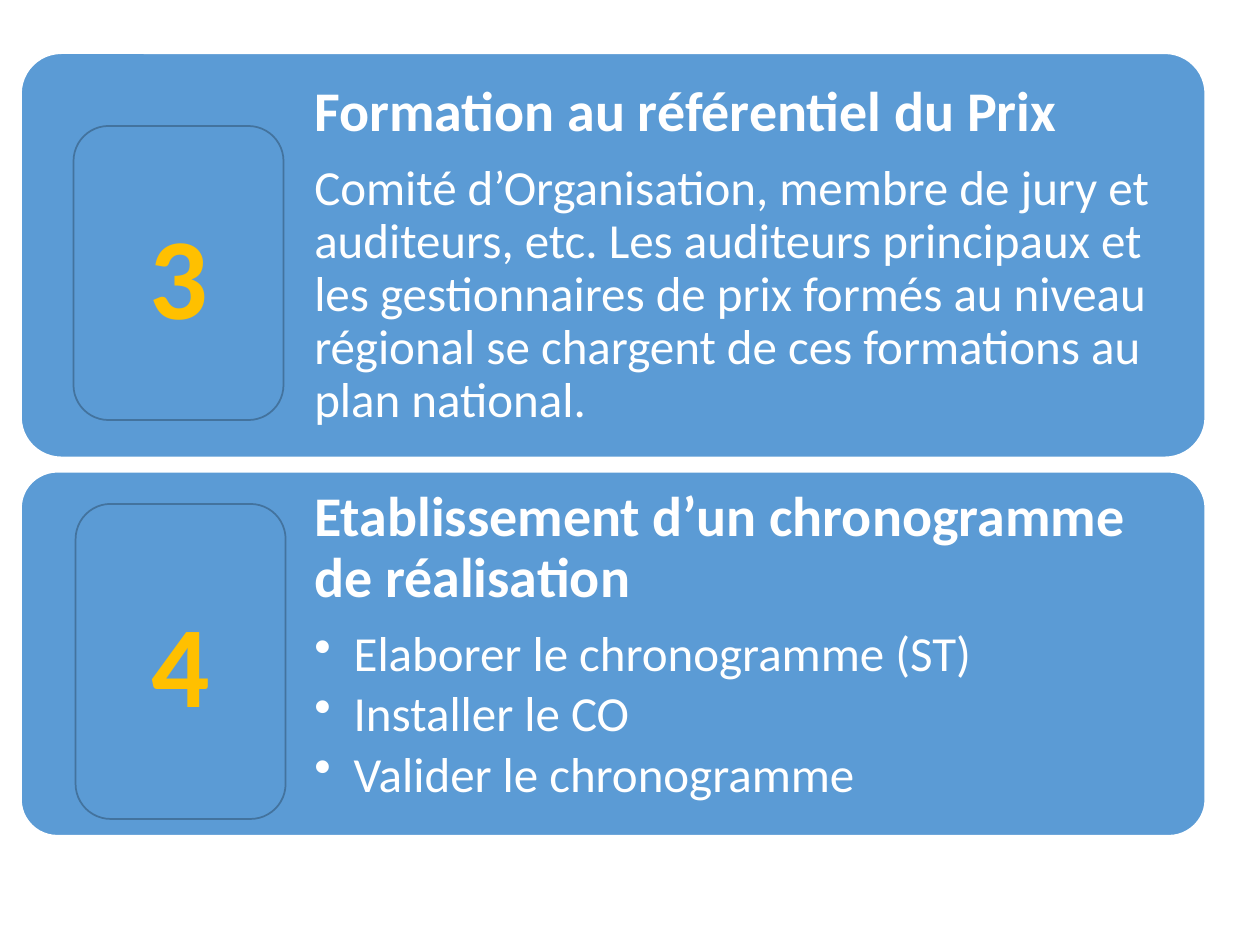
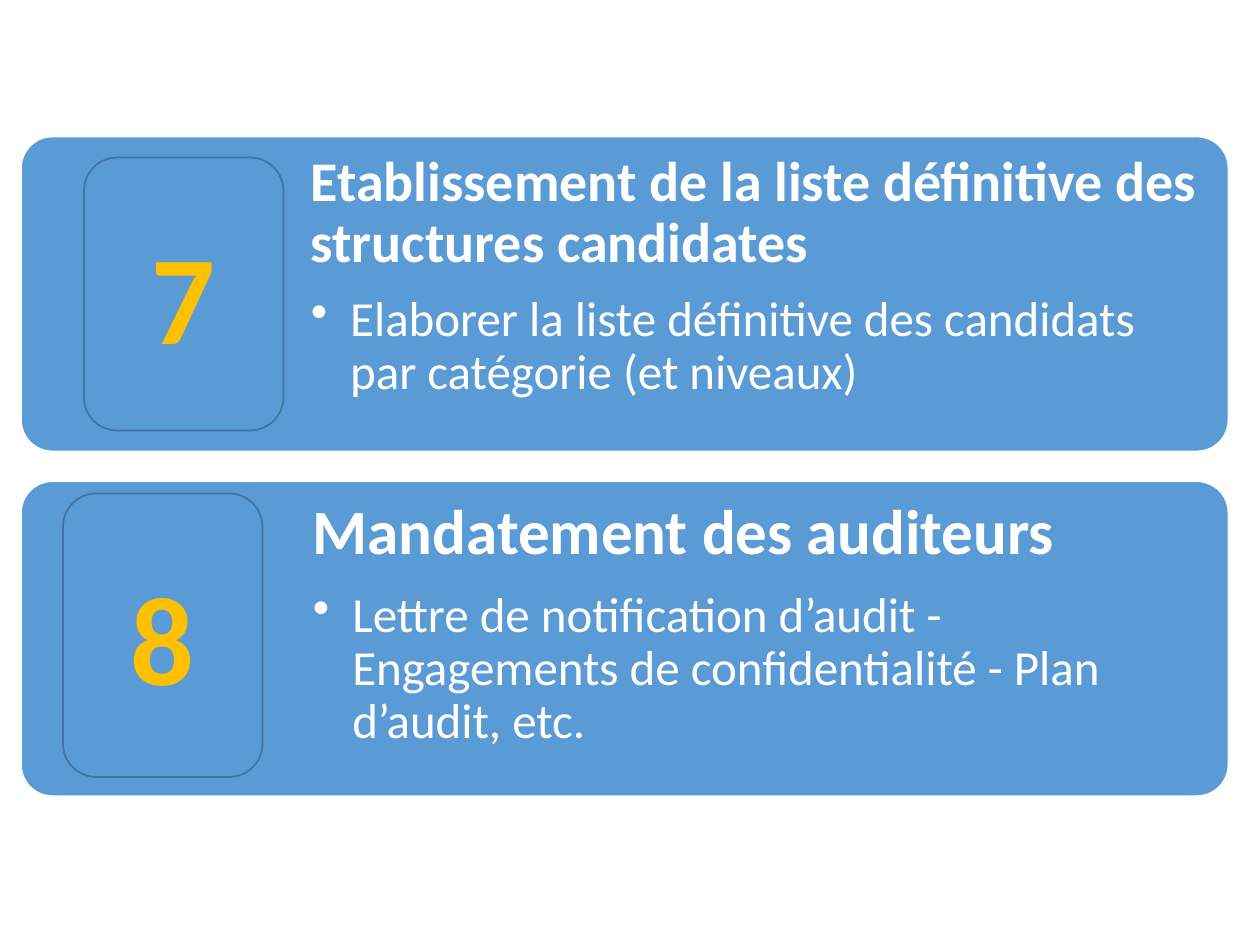
from lxml.etree import SubElement
from pptx import Presentation
from pptx.dml.color import RGBColor
from pptx.enum.shapes import MSO_SHAPE
from pptx.enum.text import MSO_ANCHOR, PP_ALIGN
from pptx.oxml.ns import qn
from pptx.util import Pt

BLUE, OUTLINE, GOLD, WHITE = "5B9BD5", "43739E", "FFC000", "FFFFFF"
FONT = "Calibri"
BODY_SIZE = 28
BULLET_INDENT = 22.5
PANEL_LEFT = 12


def add_rounded(slide, left, top, width, height, line_color):
    shape = slide.shapes.add_shape(
        MSO_SHAPE.ROUNDED_RECTANGLE, Pt(left), Pt(top), Pt(width), Pt(height))
    shape.shadow.inherit = False
    shape.fill.solid()
    shape.fill.fore_color.rgb = RGBColor.from_string(BLUE)
    shape.line.color.rgb = RGBColor.from_string(line_color)
    shape.line.width = Pt(1)
    return shape


def add_text(paragraph, text, size, color, bold):
    run = paragraph.add_run()
    run.text = text
    run.font.name = FONT
    run.font.size = Pt(size)
    run.font.bold = bold
    run.font.color.rgb = RGBColor.from_string(color)


slides = [
    {
        "panel_width": 676.8, "text_left": 170, "number_size": 66, "badge_width": 120,
        "steps": [
            {"number": "3", "top": 30.4, "height": 231, "badge": (42, 72, 168),
             "title": "Formation au référentiel du Prix", "title_size": 32, "inset": 9.6,
             "anchor": MSO_ANCHOR.MIDDLE, "bulleted": False,
             "body": ["Comité d’Organisation, membre de jury et auditeurs, etc. "
                      "Les auditeurs principaux et les gestionnaires de prix formés au "
                      "niveau régional se chargent de ces formations au plan national."]},
            {"number": "4", "top": 269.6, "height": 208, "badge": (43.2, 288, 180),
             "title": "Etablissement d’un chronogramme de réalisation",
             "title_size": 32, "inset": 9.6, "anchor": MSO_ANCHOR.TOP, "bulleted": True,
             "body": ["Elaborer le chronogramme (ST)", "Installer le CO",
                      "Valider le chronogramme"]},
        ],
    },
    {
        "panel_width": 690, "text_left": 168, "number_size": 72, "badge_width": 114,
        "steps": [
            {"number": "7", "top": 78, "height": 180, "badge": (48, 90, 156),
             "title": "Etablissement de la liste définitive des structures candidates",
             "title_size": 32, "inset": 9.6, "anchor": MSO_ANCHOR.TOP, "bulleted": True,
             "body": ["Elaborer la liste définitive des candidats par catégorie (et niveaux)"]},
            {"number": "8", "top": 275, "height": 180, "badge": (36, 282, 162),
             "title": "Mandatement des auditeurs",
             "title_size": 36, "inset": 10.8, "anchor": MSO_ANCHOR.TOP, "bulleted": True,
             "body": ["Lettre de notification d’audit - Engagements de confidentialité - "
                      "Plan d’audit, etc."]},
        ],
    },
]

prs = Presentation()
prs.slide_width, prs.slide_height = Pt(720), Pt(540)

for content in slides:
    slide = prs.slides.add_slide(prs.slide_layouts[6])
    panel_width, text_left = content["panel_width"], content["text_left"]

    for step in content["steps"]:
        top, height = step["top"], step["height"]
        panel = add_rounded(slide, PANEL_LEFT, top, panel_width, height, WHITE)
        panel.adjustments[0] = 0.1

        description = slide.shapes.add_textbox(
            Pt(text_left), Pt(top), Pt(PANEL_LEFT + panel_width - text_left), Pt(height))
        frame = description.text_frame
        frame.word_wrap = True
        frame.vertical_anchor = step["anchor"]
        frame.margin_left = frame.margin_right = Pt(step["inset"])
        frame.margin_top = frame.margin_bottom = Pt(step["inset"])

        title = frame.paragraphs[0]
        title.line_spacing = 0.9
        title.space_after = Pt(round(0.35 * step["title_size"], 1))
        add_text(title, step["title"], step["title_size"], WHITE, True)

        for sentence in step["body"]:
            paragraph = frame.add_paragraph()
            paragraph.line_spacing = 0.9
            spacing = 0.15 if step["bulleted"] else 0.35
            paragraph.space_after = Pt(round(spacing * BODY_SIZE, 1))
            if step["bulleted"]:
                paragraph.level = 1
                properties = paragraph._p.get_or_add_pPr()
                properties.set("marL", str(Pt(BULLET_INDENT)))
                properties.set("indent", str(-Pt(BULLET_INDENT)))
                SubElement(properties, qn("a:buChar")).set("char", "•")
            add_text(paragraph, sentence, BODY_SIZE, WHITE, False)

        badge_left, badge_top, badge_height = step["badge"]
        badge = add_rounded(slide, badge_left, badge_top,
                            content["badge_width"], badge_height, OUTLINE)
        badge.text_frame.vertical_anchor = MSO_ANCHOR.MIDDLE
        number = badge.text_frame.paragraphs[0]
        number.alignment = PP_ALIGN.CENTER
        add_text(number, step["number"], content["number_size"], GOLD, True)

prs.save("out.pptx")
